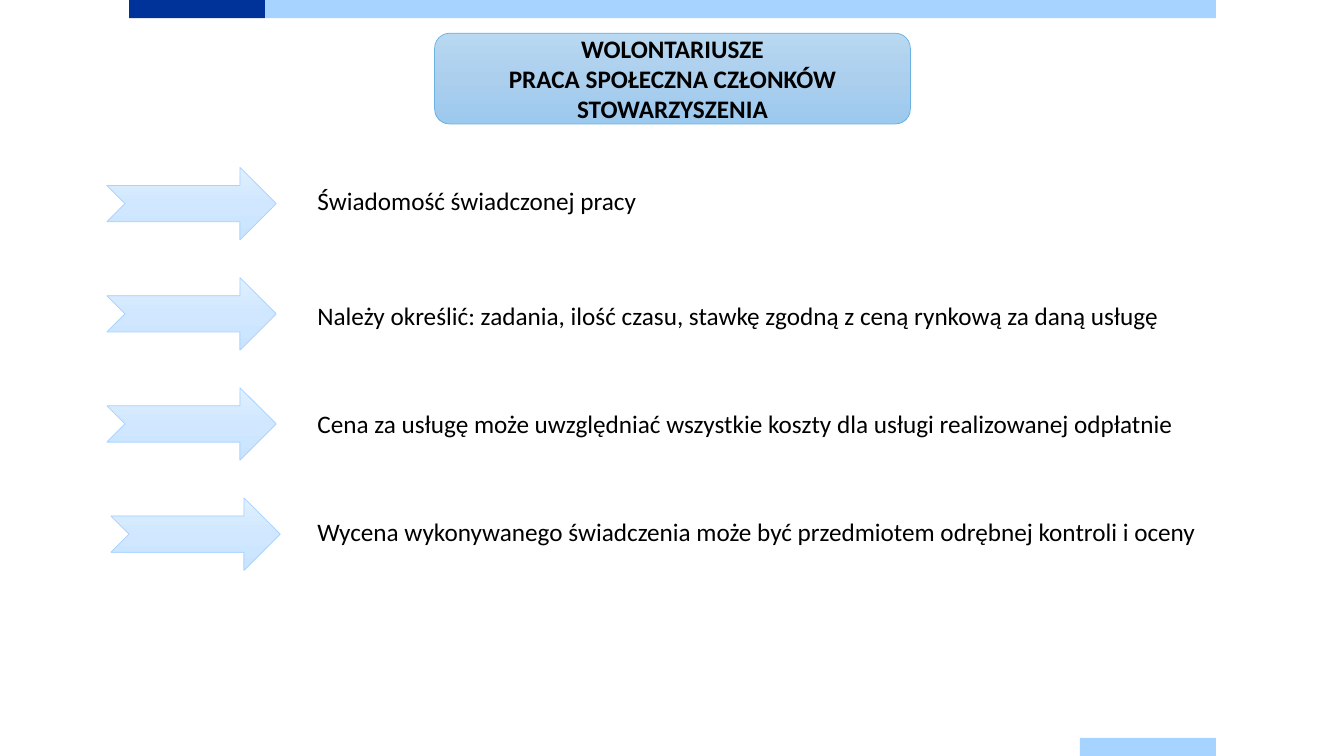
from copy import deepcopy

from pptx import Presentation
from pptx.dml.color import RGBColor
from pptx.enum import shapes, text
from pptx.oxml.ns import qn
from pptx.util import Inches, Pt

BLACK = RGBColor(0x00, 0x00, 0x00)
NAVY = RGBColor(0x00, 0x33, 0x99)
SKY = RGBColor(0xA6, 0xD3, 0xFF)
TITLE_LINE = RGBColor(0x6B, 0xB1, 0xE2)
TITLE_GRADIENT = (RGBColor(0xB9, 0xD8, 0xF1), RGBColor(0xAB, 0xCF, 0xED), RGBColor(0x9C, 0xC9, 0xEE))
ARROW_GRADIENT = (RGBColor(0xE1, 0xF0, 0xFF), RGBColor(0xD0, 0xE7, 0xFF), RGBColor(0xCA, 0xE4, 0xFF))

FONT = "Calibri"
TITLE = "WOLONTARIUSZE\vPRACA SPOŁECZNA CZŁONKÓW STOWARZYSZENIA"
ROW_TOP, ROW_PITCH = 1.66, 1.093
# Each point: wording, arrow left, text top, text width, text height, line spacing
POINTS = (
    ("Świadomość świadczonej pracy", 1.06, 1.79, 3.49, 0.4, 1.0),
    ("Należy określić: zadania, ilość czasu, stawkę zgodną z ceną rynkową za daną usługę",
     1.06, 2.78, 9.03, 0.51, 1.5),
    ("Cena za usługę może uwzględniać wszystkie koszty dla usługi realizowanej odpłatnie",
     1.06, 4.0, 9.16, 0.4, 1.0),
    ("Wycena wykonywanego świadczenia może być przedmiotem odrębnej kontroli i oceny",
     1.1, 5.07, 9.55, 0.4, 1.0),
)


def add_plain_shape(slide, kind, box):
    """Add a preset shape without shadow in a box given in inches."""
    shape = slide.shapes.add_shape(kind, *map(Inches, box))
    shape.shadow.inherit = False
    return shape


def add_bar(slide, box, color):
    """Add a borderless bar of one colour."""
    bar = add_plain_shape(slide, shapes.MSO_SHAPE.RECTANGLE, box)
    bar.fill.solid()
    bar.fill.fore_color.rgb = color
    bar.line.fill.background()


def add_gradient_shape(slide, kind, box, colors, line_color):
    """Add a thinly outlined shape shaded from top to bottom in three colours."""
    shape = add_plain_shape(slide, kind, box)
    shape.fill.gradient()
    shape.fill.gradient_angle = 270
    stop_list = shape._element.spPr.find(".//" + qn("a:gsLst"))
    stop_list.insert(1, deepcopy(stop_list[0]))
    for stop, position, color in zip(shape.fill.gradient_stops, (0, 0.5, 1), colors):
        stop.position = position
        stop.color.rgb = color
    shape.line.color.rgb = line_color
    shape.line.width = Pt(0.5)


def format_font(paragraph, bold=False):
    """Give every run of a paragraph the slide's type style."""
    for run in paragraph.runs:
        run.font.name = FONT
        run.font.size = Pt(18)
        run.font.bold = bold
        run.font.color.rgb = BLACK


def add_title(slide, box):
    """Place the slide title centred on its rounded plate."""
    add_gradient_shape(slide, shapes.MSO_SHAPE.ROUNDED_RECTANGLE, box, TITLE_GRADIENT, TITLE_LINE)
    title = slide.shapes.title
    title.left, title.top, title.width, title.height = map(Inches, box)
    slide.shapes._spTree.append(title._element)
    frame = title.text_frame
    frame.text = TITLE
    frame.word_wrap = True
    frame.auto_size = text.MSO_AUTO_SIZE.NONE
    frame.vertical_anchor = text.MSO_ANCHOR.MIDDLE
    frame.margin_top = frame.margin_bottom = 0
    paragraph = frame.paragraphs[0]
    paragraph.alignment = text.PP_ALIGN.CENTER
    format_font(paragraph, bold=True)


def add_point(slide, arrow_box, text_box, wording, line_spacing):
    """Add one arrow with its statement on the right."""
    add_gradient_shape(slide, shapes.MSO_SHAPE.NOTCHED_RIGHT_ARROW, arrow_box, ARROW_GRADIENT, SKY)
    frame = slide.shapes.add_textbox(*map(Inches, text_box)).text_frame
    frame.text = wording
    frame.word_wrap = True
    frame.auto_size = text.MSO_AUTO_SIZE.SHAPE_TO_FIT_TEXT
    paragraph = frame.paragraphs[0]
    paragraph.line_spacing = line_spacing
    format_font(paragraph)


def main():
    """Build and save the slide."""
    presentation = Presentation()
    presentation.slide_width = Inches(13.33)
    presentation.slide_height = Inches(7.5)
    slide = presentation.slides.add_slide(presentation.slide_layouts[5])
    add_bar(slide, (1.28, 0, 1.35, 0.18), NAVY)
    add_bar(slide, (2.63, 0, 9.43, 0.18), SKY)
    add_bar(slide, (10.71, 7.32, 1.35, 0.18), SKY)
    add_title(slide, (4.31, 0.33, 4.72, 0.9))
    for index, (wording, left, top, width, height, spacing) in enumerate(POINTS):
        arrow_box = (left, ROW_TOP + index * ROW_PITCH, 1.68, 0.72)
        add_point(slide, arrow_box, (3.05, top, width, height), wording, spacing)
    presentation.save("out.pptx")


if __name__ == "__main__":
    main()
